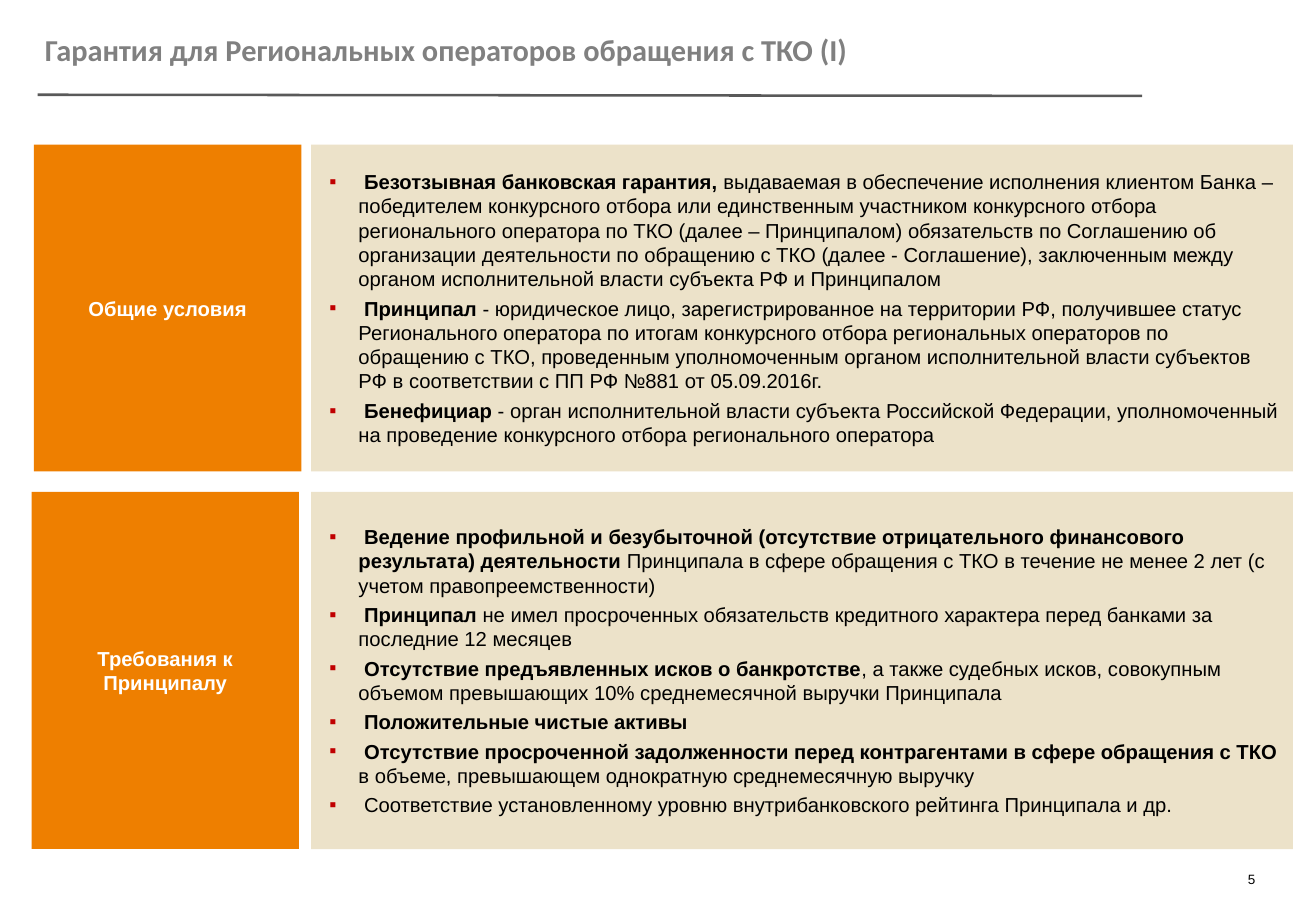
from lxml import etree
from pptx import Presentation
from pptx.dml.color import RGBColor
from pptx.enum.shapes import MSO_CONNECTOR, MSO_SHAPE
from pptx.enum.text import MSO_ANCHOR, MSO_AUTO_SIZE, PP_ALIGN
from pptx.oxml.ns import qn
from pptx.util import Inches, Pt

MIDDLE = MSO_ANCHOR.MIDDLE
CENTER, LEFT, RIGHT = PP_ALIGN.CENTER, PP_ALIGN.LEFT, PP_ALIGN.RIGHT

ORANGE = RGBColor(0xEE, 0x7F, 0x00)
SAND = RGBColor(0xEC, 0xE2, 0xC9)
BULLET_RED = RGBColor(0xC0, 0x00, 0x00)
TITLE_GRAY = RGBColor(0x80, 0x80, 0x80)
RULE_GRAY = RGBColor(0x59, 0x59, 0x59)
WHITE = RGBColor(0xFF, 0xFF, 0xFF)
BLACK = RGBColor(0x00, 0x00, 0x00)

TITLE = "Гарантия для Региональных операторов обращения с ТКО (I)"
PAGE_NUMBER = "5"

# Each item is a bold part followed by a regular part.
GENERAL_TERMS = [
    ("Безотзывная банковская гарантия, ",
     "выдаваемая в обеспечение исполнения клиентом Банка – победителем конкурсного "
     "отбора или единственным участником конкурсного отбора регионального оператора "
     "по ТКО (далее – Принципалом) обязательств по Соглашению об организации "
     "деятельности по обращению с ТКО (далее - Соглашение), заключенным между "
     "органом исполнительной власти субъекта РФ и Принципалом"),
    ("Принципал",
     " - юридическое лицо, зарегистрированное на территории РФ, получившее статус "
     "Регионального оператора по итогам конкурсного отбора региональных операторов "
     "по обращению с ТКО, проведенным уполномоченным органом исполнительной власти "
     "субъектов РФ в соответствии с ПП РФ №881 от 05.09.2016г."),
    ("Бенефициар",
     " - орган исполнительной власти субъекта Российской Федерации, уполномоченный "
     "на проведение конкурсного отбора регионального оператора"),
]
REQUIREMENTS = [
    ("Ведение профильной и безубыточной (отсутствие отрицательного финансового "
     "результата) деятельности ",
     "Принципала в сфере обращения с ТКО в течение не менее 2 лет "
     "(с учетом правопреемственности)"),
    ("Принципал ",
     "не имел просроченных обязательств кредитного характера перед банками за "
     "последние 12 месяцев"),
    ("Отсутствие предъявленных исков о банкротстве",
     ", а также судебных исков, совокупным объемом превышающих 10% среднемесячной "
     "выручки Принципала"),
    ("Положительные чистые активы", ""),
    ("Отсутствие просроченной задолженности перед контрагентами в сфере обращения с ТКО ",
     "в объеме, превышающем однократную среднемесячную выручку"),
    ("", "Соответствие установленному уровню внутрибанковского рейтинга Принципала и др."),
]
# Label, label left, top, height, items
SECTIONS = [
    ("Общие условия", 0.28, 1.19, 2.69, GENERAL_TERMS),
    ("Требования к Принципалу", 0.26, 4.05, 2.94, REQUIREMENTS),
]
LABEL_WIDTH = 2.2
LIST_LEFT, LIST_WIDTH = 2.56, 8.08


def place(shape, left, top, width, height):
    shape.left, shape.top = Inches(left), Inches(top)
    shape.width, shape.height = Inches(width), Inches(height)


def fill_shape(shape, color):
    shape.fill.solid()
    shape.fill.fore_color.rgb = color
    shape.line.fill.background()


def format_font(font, size, color, bold=False, name="Arial"):
    font.name, font.size, font.bold = name, Pt(size), bold
    font.color.rgb = color


def write_line(shape, text, alignment, *font_settings):
    """Put one formatted paragraph, vertically centred, into the shape."""
    frame = shape.text_frame
    frame.text = text
    frame.word_wrap = True
    frame.auto_size = MSO_AUTO_SIZE.NONE
    frame.vertical_anchor = MIDDLE
    paragraph = frame.paragraphs[0]
    paragraph.alignment = alignment
    format_font(paragraph.runs[0].font, *font_settings)


def add_bullet(paragraph):
    properties = paragraph._p.get_or_add_pPr()
    properties.set("marL", str(Inches(0.39)))
    properties.set("indent", str(Inches(-0.24)))
    color = etree.SubElement(properties, qn("a:buClr"))
    etree.SubElement(color, qn("a:srgbClr"), val=str(BULLET_RED))
    etree.SubElement(properties, qn("a:buFont"), typeface="Arial")
    etree.SubElement(properties, qn("a:buChar"), char="▪")


def write_list(placeholder, items):
    frame = placeholder.text_frame
    frame.word_wrap = True
    frame.auto_size = MSO_AUTO_SIZE.NONE
    frame.vertical_anchor = MIDDLE
    frame.margin_left, frame.margin_right = 0, Inches(0.1)
    frame.margin_top = frame.margin_bottom = Inches(0.05)
    for index, (strong, regular) in enumerate(items):
        paragraph = frame.add_paragraph() if index else frame.paragraphs[0]
        add_bullet(paragraph)
        paragraph.space_before = Pt(3 if index else 0)
        for text, bold in ((" ", False), (strong, True), (regular, False)):
            if text:
                run = paragraph.add_run()
                run.text = text
                format_font(run.font, 12, BLACK, bold)


def main():
    presentation = Presentation()
    presentation.slide_width, presentation.slide_height = Inches(10.83), Inches(7.5)
    slide = presentation.slides.add_slide(presentation.slide_layouts.get_by_name("Two Content"))
    shapes = slide.shapes

    rule = shapes.add_connector(
        MSO_CONNECTOR.STRAIGHT, Inches(0.31), Inches(0.78), Inches(9.4), Inches(0.79))
    rule.line.color.rgb, rule.line.width = RULE_GRAY, Pt(1.5)
    etree.SubElement(rule._element.spPr, qn("a:effectLst"))

    place(shapes.title, 0.27, 0.21, 8.47, 0.4)
    write_line(shapes.title, TITLE, LEFT, 18, TITLE_GRAY, True, "Calibri")

    bodies = list(slide.placeholders)[1:]
    for body, (label, left, top, height, items) in zip(bodies, SECTIONS):
        label_box = shapes.add_shape(MSO_SHAPE.RECTANGLE, 0, 0, 0, 0)
        place(label_box, left, top, LABEL_WIDTH, height)
        label_box.shadow.inherit = False
        fill_shape(label_box, ORANGE)
        write_line(label_box, label, CENTER, 12, WHITE, True)

        place(body, LIST_LEFT, top, LIST_WIDTH, height)
        fill_shape(body, SAND)
        write_list(body, items)

    number_box = shapes.add_textbox(Inches(8.1), Inches(6.98), Inches(2.33), Inches(0.52))
    write_line(number_box, PAGE_NUMBER, RIGHT, 8, BLACK)

    presentation.save("out.pptx")


if __name__ == "__main__":
    main()
